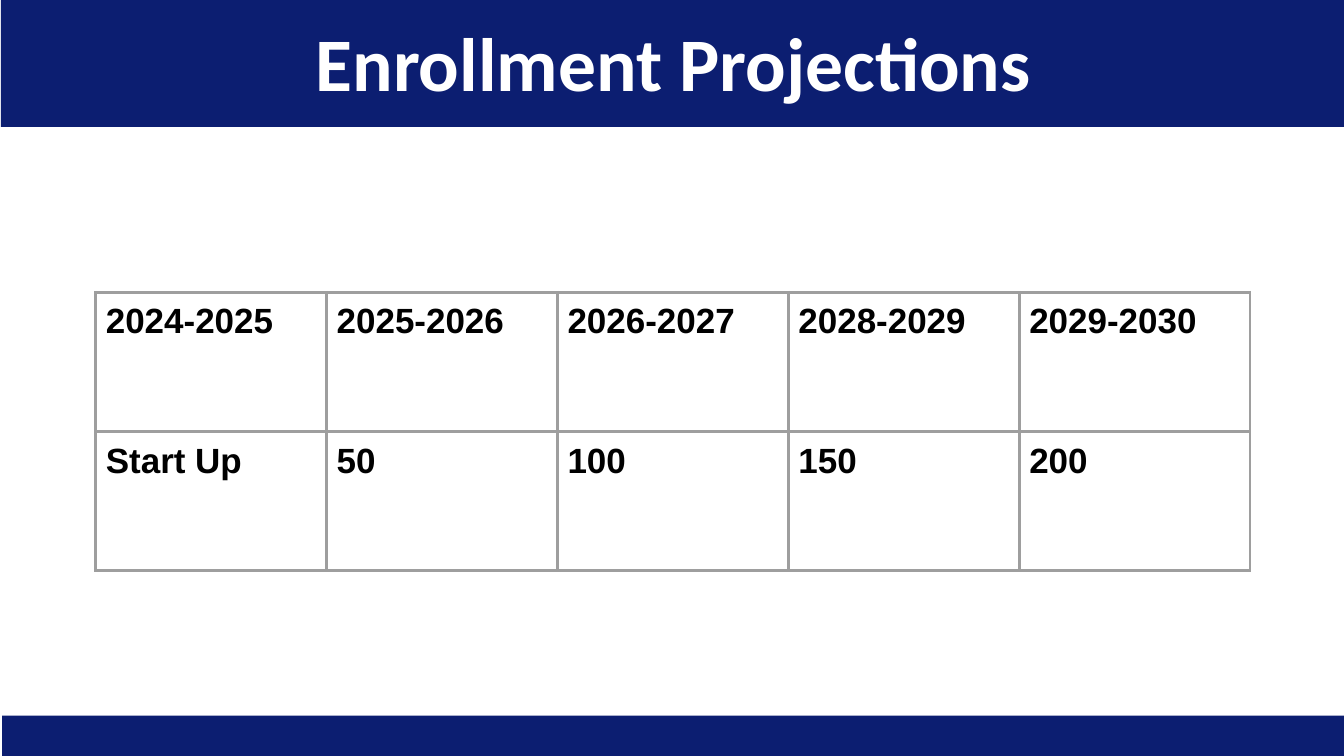
from pptx import Presentation
from pptx.dml.color import RGBColor
from pptx.enum.shapes import MSO_SHAPE
from pptx.enum.text import MSO_ANCHOR, PP_ALIGN
from pptx.oxml import parse_xml
from pptx.oxml.ns import nsdecls
from pptx.util import Inches, Pt

NAVY = RGBColor(0x0C, 0x1E, 0x71)
WHITE = RGBColor(0xFF, 0xFF, 0xFF)
BLACK = RGBColor(0x00, 0x00, 0x00)
GRID_GRAY = RGBColor(0x9E, 0x9E, 0x9E)

ENROLLMENT = [
    ("2024-2025", "2025-2026", "2026-2027", "2028-2029", "2029-2030"),
    ("Start Up", "50", "100", "150", "200"),
]
COLUMN_WIDTH, ROW_HEIGHT = 2.29, 1.38


def add_run(paragraph, text, font_name, size, color):
    run = paragraph.add_run()
    run.text = text
    run.font.name = font_name
    run.font.size = Pt(size)
    run.font.bold = True
    run.font.color.rgb = color


def set_borders(cell, color, width):
    properties = cell._tc.get_or_add_tcPr()
    for position, side in enumerate(("lnL", "lnR", "lnT", "lnB")):
        # Border lines must come before the cell fill
        properties.insert(position, parse_xml(
            f'<a:{side} {nsdecls("a")} w="{Pt(width)}"><a:solidFill>'
            f'<a:srgbClr val="{color}"/></a:solidFill></a:{side}>'))


prs = Presentation()
prs.slide_width, prs.slide_height = Inches(13.33), Inches(7.5)
slide = prs.slides.add_slide(prs.slide_layouts[6])
slide.background.fill.solid()
slide.background.fill.fore_color.rgb = WHITE

# Header and footer bands
for left, top, height in ((0.01, -0.01, 1.27), (0.02, 7.1, 0.46)):
    band = slide.shapes.add_shape(
        MSO_SHAPE.RECTANGLE, Inches(left), Inches(top), Inches(13.32), Inches(height))
    band.shadow.inherit = False
    band.fill.solid()
    band.fill.fore_color.rgb = NAVY
    band.line.fill.background()

# Title
title = slide.shapes.add_textbox(
    Inches(0.15), Inches(-0.01), Inches(13.06), Inches(1.23)).text_frame
title.word_wrap = True
title.vertical_anchor = MSO_ANCHOR.MIDDLE
title.margin_left = title.margin_right = Inches(0.13)
title.margin_top = title.margin_bottom = Inches(0.07)
title.paragraphs[0].alignment = PP_ALIGN.CENTER
add_run(title.paragraphs[0], "Enrollment Projections", "Calibri", 54, WHITE)

# Enrollment by school year
row_count, column_count = len(ENROLLMENT), len(ENROLLMENT[0])
projections = slide.shapes.add_table(
    row_count, column_count, Inches(0.95), Inches(2.9),
    Inches(COLUMN_WIDTH * column_count), Inches(ROW_HEIGHT * row_count)).table
projections.first_row = projections.horz_banding = False
for row, values in enumerate(ENROLLMENT):
    for column, value in enumerate(values):
        cell = projections.cell(row, column)
        cell.margin_left = cell.margin_right = Inches(0.1)
        cell.margin_top = cell.margin_bottom = Inches(0.1)
        cell.fill.solid()
        cell.fill.fore_color.rgb = WHITE
        set_borders(cell, GRID_GRAY, 2.25)
        add_run(cell.text_frame.paragraphs[0], value, "Arial", 25, BLACK)

prs.save("out.pptx")
